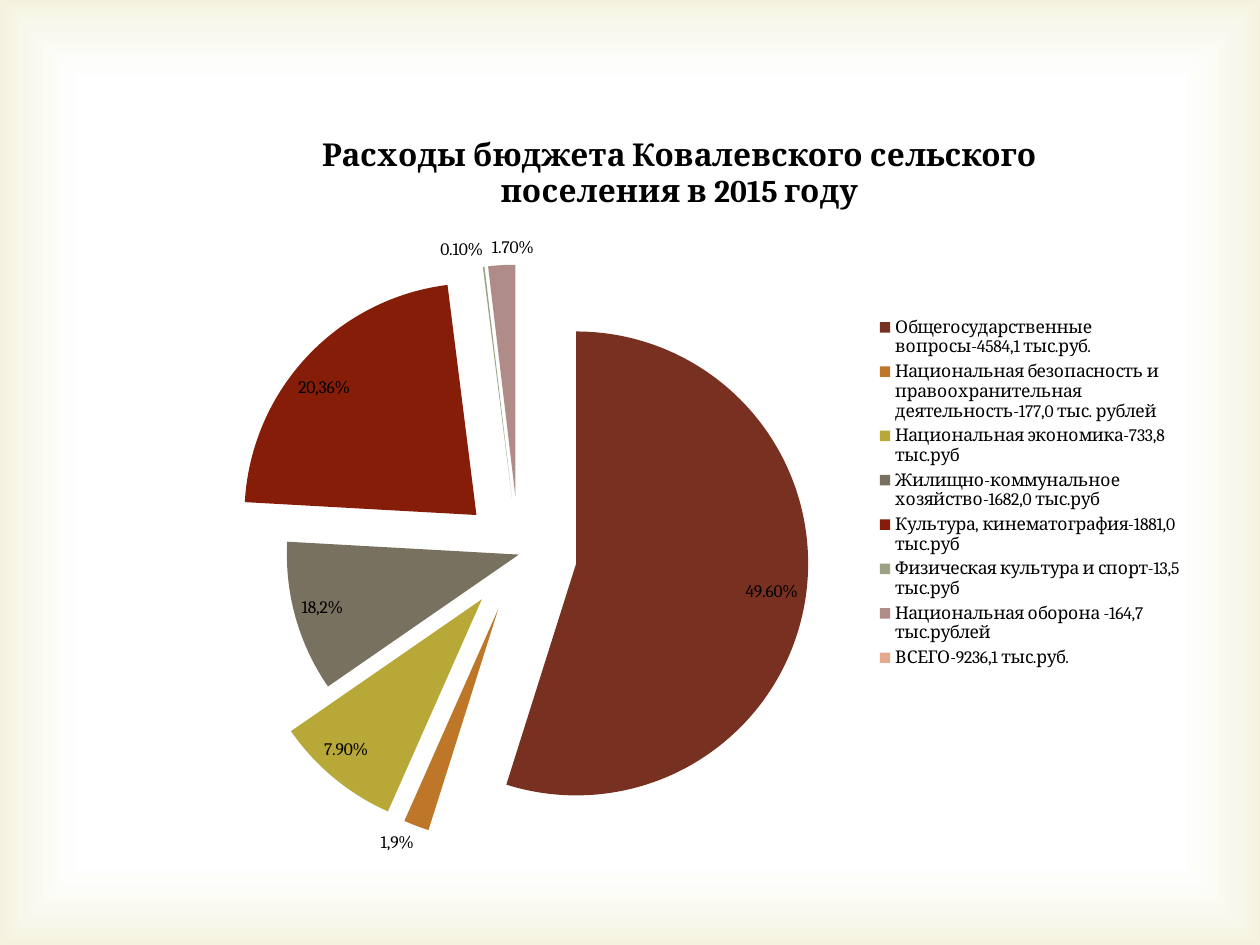
from lxml.etree import SubElement
from pptx import Presentation
from pptx.chart.data import CategoryChartData
from pptx.dml.color import RGBColor
from pptx.enum.chart import XL_CHART_TYPE, XL_LABEL_POSITION, XL_LEGEND_POSITION
from pptx.enum.shapes import MSO_SHAPE
from pptx.oxml import parse_xml
from pptx.oxml.ns import nsdecls, qn
from pptx.util import Cm, Pt

TITLE = "Расходы бюджета Ковалевского сельского поселения в 2015 году"
FONT = "Cambria"
BLACK = "000000"
EXPENSES = [
    ("Общегосударственные вопросы-4584,1 тыс.руб.", 0.496, "783021", 25, None),
    ("Национальная безопасность и правоохранительная деятельность-177,0 тыс. рублей",
     0.016, "BE7728", 25, "1,9%"),
    ("Национальная экономика-733,8 тыс.руб", 0.079, "B8A838", 25, None),
    ("Жилищно-коммунальное хозяйство-1682,0 тыс.руб", 0.095, "787160", 0, "18,2%"),
    ("Культура, кинематография-1881,0 тыс.руб", 0.2, "861D08", 25, "20,36%"),
    ("Физическая культура и спорт-13,5 тыс.руб", 0.001, "9BA384", 25, None),
    ("Национальная оборона -164,7 тыс.рублей", 0.017, "B08C88", 25, None),
    ("ВСЕГО-9236,1 тыс.руб.", None, "E3AA8C", 25, None),
]
GLOW_STOPS = [(83, "FFFFFF", 11), (100, "D1CA75", 23)]


def color(value):
    return RGBColor.from_string(value)


def style_font(font, size, bold=False):
    font.name = FONT
    font.size = Pt(size)
    font.bold = bold
    font.color.rgb = color(BLACK)


def add_glow(slide, width, height):
    glow = slide.shapes.add_shape(MSO_SHAPE.RECTANGLE, 0, 0, width, height)
    glow.shadow.inherit = False
    glow.line.fill.background()
    stops = "".join(
        f'<a:gs pos="{position * 1000}"><a:srgbClr val="{tint}">'
        f'<a:alpha val="{opacity * 1000}"/></a:srgbClr></a:gs>'
        for position, tint, opacity in GLOW_STOPS
    )
    gradient = parse_xml(
        f'<a:gradFill {nsdecls("a")} rotWithShape="1"><a:gsLst>{stops}</a:gsLst>'
        '<a:path path="rect"><a:fillToRect l="50000" t="50000" r="50000" b="50000"/>'
        "</a:path></a:gradFill>"
    )
    glow.element.spPr.find(qn("a:prstGeom")).addnext(gradient)


def add_expense_chart(slide):
    data = CategoryChartData(number_format="0.00%")
    data.categories = [expense[0] for expense in EXPENSES]
    data.add_series("Series 1", [expense[1] for expense in EXPENSES])
    chart = slide.shapes.add_chart(
        XL_CHART_TYPE.PIE, Cm(3.3), Cm(2.13), Cm(20.8), Cm(15.6), data
    ).chart
    style_font(chart.font, 10)

    chart.has_title = True
    title = chart.chart_title.text_frame
    title.text = TITLE
    style_font(title.paragraphs[0].font, 18, True)
    chart.chart_title.include_in_layout = False

    chart.has_legend = True
    chart.legend.position = XL_LEGEND_POSITION.RIGHT
    chart.legend.include_in_layout = False
    style_font(chart.legend.font, 10)

    plot = chart.plots[0]
    plot.vary_by_categories = True
    series = plot.series[0]
    labels = series.data_labels
    labels.show_value = True
    labels.show_percentage = False
    labels.number_format = "0.00%"
    labels.number_format_is_linked = False
    labels.position = XL_LABEL_POSITION.BEST_FIT
    style_font(labels.font, 10)

    for index, (name, value, fill, explosion, label_text) in enumerate(EXPENSES):
        point = series.points[index]
        point.format.fill.solid()
        point.format.fill.fore_color.rgb = color(fill)
        point.format.line.fill.background()
        if label_text:
            label = point.data_label
            label.text_frame.text = label_text
            style_font(label.text_frame.paragraphs[0].font, 10)
            label.position = XL_LABEL_POSITION.BEST_FIT

    slices = series._element.findall(qn("c:dPt"))
    for slice_element, expense in zip(slices, EXPENSES):
        for old in slice_element.findall(qn("c:explosion")):
            slice_element.remove(old)
        explosion = SubElement(slice_element, qn("c:explosion"), val=str(expense[3]))
        slice_element.find(qn("c:spPr")).addprevious(explosion)


def main():
    presentation = Presentation()
    presentation.slide_width = Cm(25.4)
    presentation.slide_height = Cm(19.05)
    slide = presentation.slides.add_slide(presentation.slide_layouts[6])
    slide.background.fill.solid()
    slide.background.fill.fore_color.rgb = color("FFFFFF")
    add_glow(slide, presentation.slide_width, presentation.slide_height)
    add_expense_chart(slide)
    presentation.save("out.pptx")


if __name__ == "__main__":
    main()
